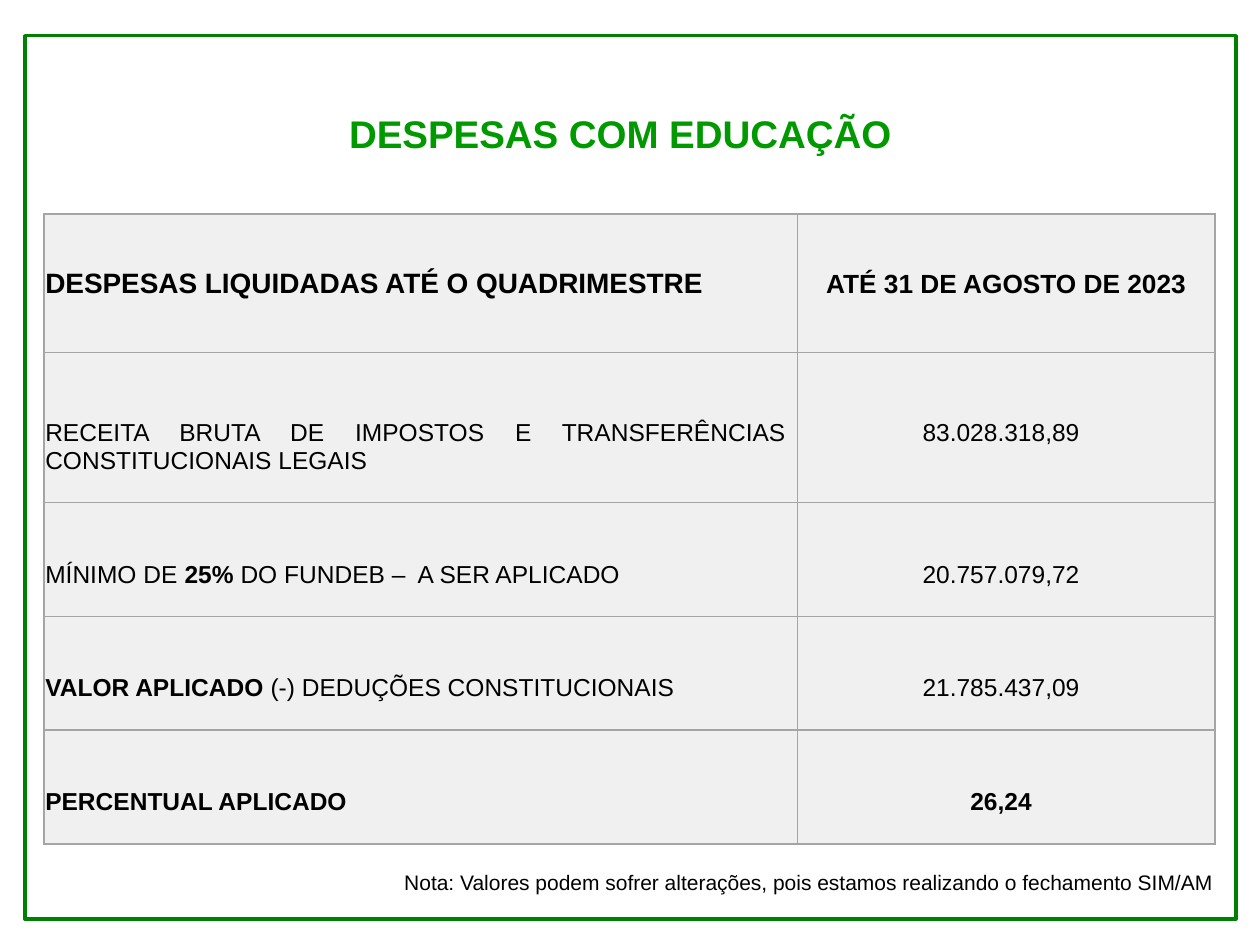
from pptx import Presentation
from pptx.dml.color import RGBColor
from pptx.enum import shapes, text
from pptx.oxml import parse_xml
from pptx.oxml.ns import nsdecls
from pptx.util import Pt

TITLE = "DESPESAS COM EDUCAÇÃO "
NOTE = "Nota: Valores podem sofrer alterações, pois estamos realizando o fechamento SIM/AM"
HEADERS = ["DESPESAS LIQUIDADAS ATÉ O QUADRIMESTRE", "ATÉ 31 DE AGOSTO DE 2023"]
ROWS = [
    ([("RECEITA BRUTA DE IMPOSTOS E TRANSFERÊNCIAS CONSTITUCIONAIS LEGAIS", False)],
     [("83.028.318,89", False)]),
    ([("MÍNIMO DE ", False), ("25% ", True), ("DO FUNDEB –  A SER APLICADO", False)],
     [("20.757.079,72", False)]),
    ([("VALOR APLICADO ", True), ("(-) DEDUÇÕES CONSTITUCIONAIS", False)],
     [("21.785.437,09", False)]),
    ([("PERCENTUAL APLICADO", True)], [("26,24", True)]),
]
COLUMN_WIDTHS = [430.5, 238.5]
ROW_HEIGHTS = [79, 85.7, 65.1, 65.1, 65.1]
LINE = 16
TWO_LINE_ROW = 1

THEME = {
    "font": "Arial", "frame": "008000", "title": "009900", "ink": "000000",
    "cell": "F0F0F0", "border": "A5A5A5",
    "title_size": 22, "header_sizes": [16, 15], "body_size": 14, "note_size": 12,
}
ALIGN = text.PP_ALIGN
ANCHOR = text.MSO_ANCHOR


def color(name):
    return RGBColor.from_string(THEME[name])


def write(frame, spans, size, ink="ink", align=ALIGN.LEFT):
    para = frame.paragraphs[0]
    para.alignment = align
    for words, bold in spans:
        span = para.add_run()
        span.text = words
        span.font.name = THEME["font"]
        span.font.size = Pt(size)
        span.font.bold = bold
        span.font.color.rgb = color(ink)


def add_text(page, bounds, spans, size, anchor=ANCHOR.TOP, **style):
    box = page.shapes.add_textbox(*map(Pt, bounds))
    box.text_frame.word_wrap = True
    box.text_frame.vertical_anchor = anchor
    write(box.text_frame, spans, size, **style)


def add_borders(cell):
    properties = cell._tc.get_or_add_tcPr()
    for position, side in enumerate(("lnL", "lnR", "lnT", "lnB")):
        properties.insert(position, parse_xml(
            f'<a:{side} {nsdecls("a")} w="{Pt(1)}"><a:solidFill>'
            f'<a:srgbClr val="{THEME["border"]}"/></a:solidFill></a:{side}>'))


def fill_cell(cell, spans, size, align, anchor, right=0.7, bottom=0):
    cell.margin_left = cell.margin_top = Pt(0.7)
    cell.margin_right, cell.margin_bottom = Pt(right), Pt(bottom)
    cell.vertical_anchor = anchor
    cell.fill.solid()
    cell.fill.fore_color.rgb = color("cell")
    add_borders(cell)
    write(cell.text_frame, spans, size, align=align)


def add_expenses(page):
    table = page.shapes.add_table(
        len(ROW_HEIGHTS), len(COLUMN_WIDTHS), Pt(25.2), Pt(122.4),
        Pt(sum(COLUMN_WIDTHS)), Pt(sum(ROW_HEIGHTS))).table
    table.first_row = table.horz_banding = False
    for column, width in zip(table.columns, COLUMN_WIDTHS):
        column.width = Pt(width)
    for row, height in zip(table.rows, ROW_HEIGHTS):
        row.height = Pt(height)

    header_aligns = [ALIGN.LEFT, ALIGN.CENTER]
    for column, words in enumerate(HEADERS):
        fill_cell(table.cell(0, column), [(words, True)], THEME["header_sizes"][column],
                  header_aligns[column], ANCHOR.MIDDLE)

    body_aligns = [ALIGN.JUSTIFY, ALIGN.CENTER]
    for row, contents in enumerate(ROWS, start=1):
        for column, spans in enumerate(contents):
            lines_below = 2 if row == TWO_LINE_ROW and column == 1 else 1
            fill_cell(table.cell(row, column), spans, THEME["body_size"],
                      body_aligns[column], ANCHOR.BOTTOM, right=6.5,
                      bottom=lines_below * LINE)


def main():
    deck = Presentation()
    deck.slide_width, deck.slide_height = Pt(720), Pt(540)
    page = deck.slides.add_slide(deck.slide_layouts[6])

    frame = page.shapes.add_shape(
        shapes.MSO_SHAPE.RECTANGLE, Pt(14.2), Pt(20.4), Pt(692), Pt(504.7))
    frame.shadow.inherit = False
    frame.fill.background()
    frame.line.color.rgb = color("frame")
    frame.line.width = Pt(2)

    add_text(page, (65.5, 37.4, 584, 55.4), [(TITLE, True)], THEME["title_size"],
             anchor=ANCHOR.BOTTOM, ink="title", align=ALIGN.CENTER)
    add_expenses(page)
    add_text(page, (223.9, 493.2, 527, 21.6), [(NOTE, False)], THEME["note_size"])
    deck.save("out.pptx")


if __name__ == "__main__":
    main()
